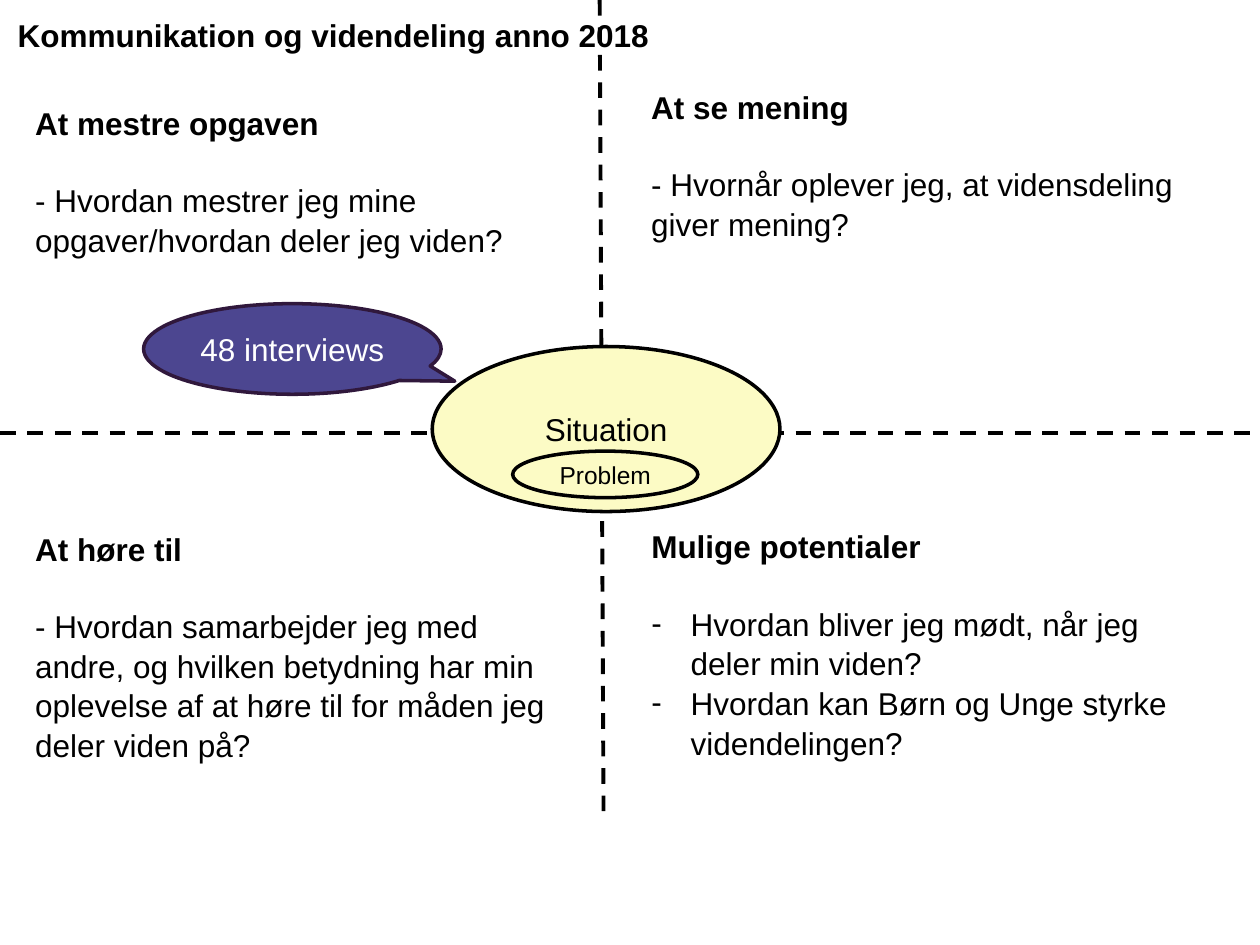
from dataclasses import dataclass

from lxml import etree
from pptx import Presentation
from pptx.dml.color import RGBColor
from pptx.enum.dml import MSO_LINE
from pptx.enum.shapes import MSO_CONNECTOR, MSO_SHAPE
from pptx.enum.text import MSO_ANCHOR, MSO_AUTO_SIZE, PP_ALIGN
from pptx.oxml.ns import qn
from pptx.util import Pt

LINE = MSO_CONNECTOR.STRAIGHT
OVAL, BUBBLE = MSO_SHAPE.OVAL, MSO_SHAPE.OVAL_CALLOUT
DASH = MSO_LINE.DASH
TOP, MID = MSO_ANCHOR.TOP, MSO_ANCHOR.MIDDLE
LEFT, MIDDLE = PP_ALIGN.LEFT, PP_ALIGN.CENTER
FIXED = MSO_AUTO_SIZE.NONE
FONT = "Arial"
COLORS = {"ink": "000000", "white": "FFFFFF", "cream": "FCFBC5",
          "blue": "4C4690", "plum": "30183C"}
SIZE, GAP, INDENT, LEAD = 18, 21.6, 22.5, 1.05
COL1, COL2, WIDE = 13, 365, 317.5


@dataclass
class Box:
    left: float
    top: float
    width: float
    height: float

    def place(self, shape) -> None:
        shape.left, shape.top = Pt(self.left), Pt(self.top)
        shape.width, shape.height = Pt(self.width), Pt(self.height)

    def lengths(self) -> tuple:
        return Pt(self.left), Pt(self.top), Pt(self.width), Pt(self.height)


@dataclass
class Field:
    box: Box
    head: str
    lines: list[str]
    listed: bool = False


@dataclass
class Bubble:
    kind: int
    box: Box
    text: str
    fill: str | None = None
    edge: str = "ink"
    color: str = "ink"
    size: float = SIZE
    tip: tuple = ()


def rgb(name: str) -> RGBColor:
    return RGBColor.from_string(COLORS[name])


def style(para, size: float, color: str, bold: bool, align) -> None:
    para.alignment = align
    para.font.name, para.font.size = FONT, Pt(size)
    para.font.bold, para.font.color.rgb = bold, rgb(color)


def bullet(para, mark: str | None) -> None:
    props = para._p.get_or_add_pPr()
    indent = Pt(INDENT) if mark else 0
    props.set("marL", str(indent))
    props.set("indent", str(-indent))
    if mark:
        etree.SubElement(props, qn("a:buChar")).set("char", mark)
    else:
        etree.SubElement(props, qn("a:buNone"))


def write(shape, head: str, lines: list[str], listed: bool = False) -> None:
    frame = shape.text_frame
    frame.word_wrap, frame.auto_size = True, FIXED
    frame.vertical_anchor = TOP
    for i, text in enumerate([head, *lines]):
        para = frame.add_paragraph() if i else frame.paragraphs[0]
        para.text = text
        bullet(para, "-" if listed and i else None)
        para.line_spacing = LEAD
        para.space_before = Pt(GAP if i == 1 else 0)
        style(para, SIZE, "ink", i == 0, LEFT)


def axis(slide, x1: float, y1: float, x2: float, y2: float) -> None:
    line = slide.shapes.add_connector(LINE, Pt(x1), Pt(y1), Pt(x2), Pt(y2))
    line.line.color.rgb = rgb("ink")
    line.line.width, line.line.dash_style = Pt(2.25), DASH
    etree.SubElement(line._element.spPr, qn("a:effectLst"))


def draw(slide, item: Bubble) -> None:
    shape = slide.shapes.add_shape(item.kind, *item.box.lengths())
    shape.shadow.inherit = False
    for i, value in enumerate(item.tip):
        shape.adjustments[i] = value
    if item.fill:
        shape.fill.solid()
        shape.fill.fore_color.rgb = rgb(item.fill)
    else:
        shape.fill.background()
    shape.line.color.rgb, shape.line.width = rgb(item.edge), Pt(2)
    frame = shape.text_frame
    frame.word_wrap, frame.vertical_anchor = False, MID
    frame.text = item.text
    style(frame.paragraphs[0], item.size, item.color, False, MIDDLE)


FIELDS = [
    Field(Box(COL1, 298, WIDE, 138), "At høre til",
          ["- Hvordan samarbejder jeg med andre, og hvilken betydning har min "
           "oplevelse af at høre til for måden jeg deler viden på?"]),
    Field(Box(COL1, 54.7, WIDE, 94.3), "At mestre opgaven",
          ["- Hvordan mestrer jeg mine opgaver/hvordan deler jeg viden?"]),
    Field(Box(COL2, 45.4, WIDE, 94.3), "At se mening",
          ["- Hvornår oplever jeg, at vidensdeling giver mening?"]),
    Field(Box(COL2, 296.6, WIDE, 138), "Mulige potentialer",
          ["Hvordan bliver jeg mødt, når jeg deler min viden?",
           "Hvordan kan Børn og Unge styrke videndelingen?"], True),
]
BUBBLES = [
    Bubble(OVAL, Box(247, 198, 198.7, 94.3), "Situation", "cream"),
    Bubble(OVAL, Box(293, 257.8, 105.8, 26.6), "Problem", size=14),
    Bubble(BUBBLE, Box(82.1, 173.5, 170, 51.8), "48 interviews", "blue",
           "plum", "white", tip=(0.546, 0.356)),
]


def main() -> None:
    deck = Presentation()
    deck.slide_width, deck.slide_height = Pt(720), Pt(540)
    slide = deck.slides.add_slide(deck.slide_layouts[1])

    # Title
    title = slide.shapes.title
    Box(2.9, 4.3, 442, 28.8).place(title)
    write(title, "Kommunikation og videndeling anno 2018", [])

    # Dashed axes
    axis(slide, 0, 247.7, 717, 247.7)
    axis(slide, 342.7, 0, 344.9, 466.6)

    # Four fields of questions
    for field in FIELDS:
        if field.listed:
            shape = slide.placeholders[1]
            field.box.place(shape)
        else:
            shape = slide.shapes.add_textbox(*field.box.lengths())
        write(shape, field.head, field.lines, field.listed)

    # Centre and callout
    for item in BUBBLES:
        draw(slide, item)

    deck.save("out.pptx")


if __name__ == "__main__":
    main()
